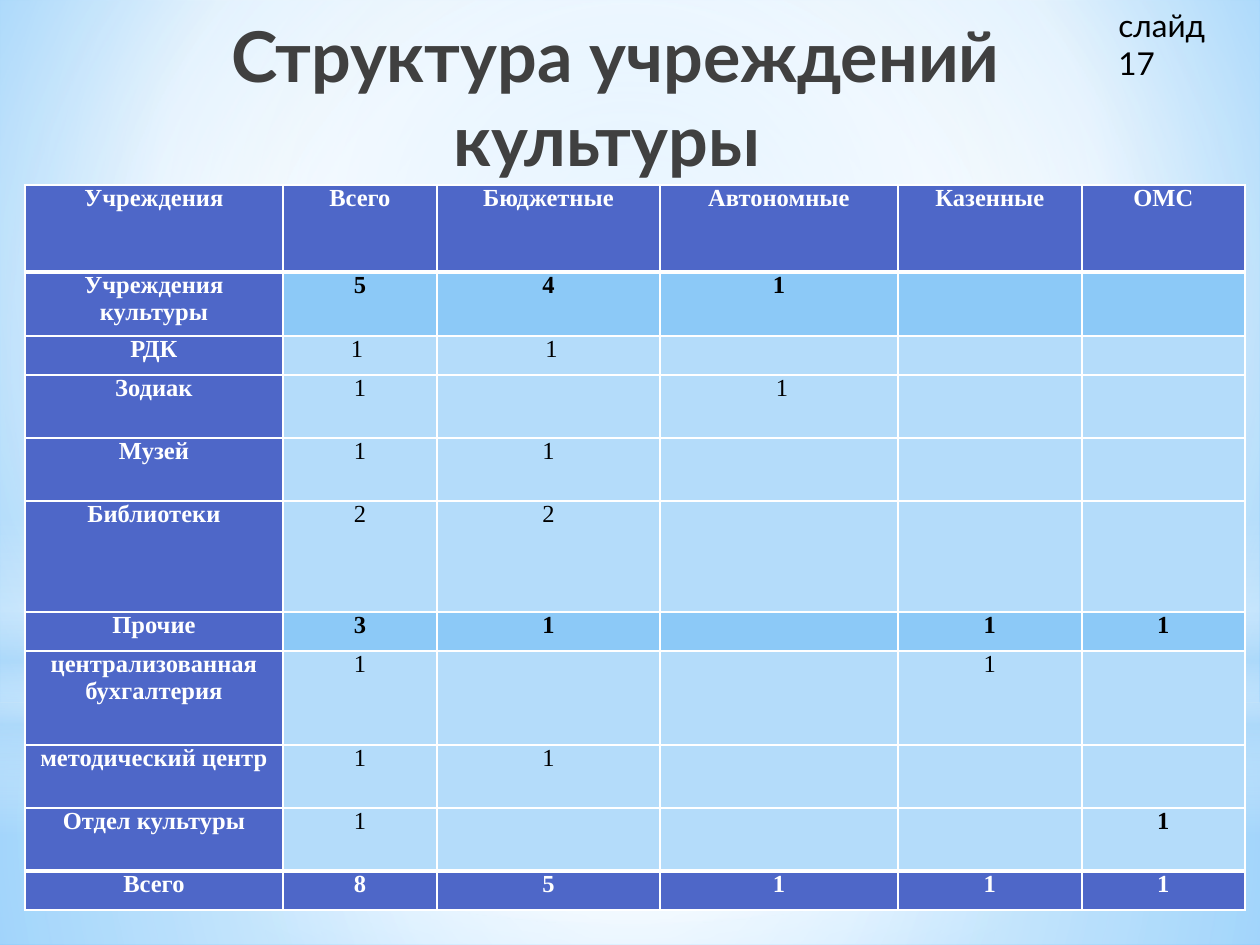
"""Build the slide on the structure of cultural institutions."""
from dataclasses import dataclass
from typing import Optional

from pptx import Presentation
from pptx import util as u
from pptx.dml.color import RGBColor
from pptx.enum import shapes, text
from pptx.oxml import parse_xml
from pptx.oxml.ns import nsdecls

PX = u.Inches(1) / 126
COLORS = {
    "white": "FFFFFF", "black": "000000", "title": "404040",
    "head": "4E67C8", "group": "8CC9F7", "body": "B4DCFA",
    "sky": "9ED5FF", "azure": "5BB9FF",
}
SERIF, SANS = "Times New Roman", "Lato"
CENTER = (50, 50, 50, 50)
COLUMNS = [258, 154, 223, 238, 184, 163]


@dataclass
class Glow:
    box: tuple
    stops: list
    focus: Optional[tuple] = CENTER
    preset: shapes.MSO_SHAPE = shapes.MSO_SHAPE.RECTANGLE


@dataclass
class Row:
    height: int
    cells: list
    tone: str = "body"
    bold_columns: tuple = (0,)


SKY = Glow((0, 0, 1260, 945),
           [(0, "sky", 100), (60, "white", 100), (100, "azure", 100)], (20, 10, 20, 60))
GLOWS = [
    Glow((0, 703, 1260, 242), [(0, "white", 91), (37, "white", 76), (100, "body", 79)]),
    Glow((0, 0, 1260, 703), [(0, "white", 89), (48, "white", 62), (100, "body", 79)]),
    Glow((0, 519, 1260, 315),
         [(0, "white", 0), (29, "white", 30), (45, "body", 40),
          (55, "white", 26), (65, "body", 60), (100, "white", 0)], None),
    Glow((0, 220, 1260, 703), [(0, "white", 100), (56, "white", 0)],
         preset=shapes.MSO_SHAPE.OVAL),
]
ALL = tuple(range(len(COLUMNS)))
ROWS = [
    Row(87, ["Учреждения", "Всего", "Бюджетные", "Автономные", "Казенные", "ОМС"], "head", ALL),
    Row(64, ["Учреждения культуры", "5", "4", "1", "", ""], "group", ALL),
    Row(39, ["РДК", "1 ", " 1", "", "", ""]),
    Row(63, ["Зодиак", "1", "", " 1", "", ""]),
    Row(63, ["Музей", "1", "1", "", "", ""]),
    Row(111, ["Библиотеки", "2", "2", "", "", ""]),
    Row(39, ["Прочие", "3", "1", "", "1", "1"], "group", ALL),
    Row(94, ["централизованная бухгалтерия", "1", "", "", "1", ""]),
    Row(63, ["методический центр", "1", "1", "", "", ""]),
    Row(63, ["Отдел культуры", "1", "", "", "", "1"], bold_columns=(0, 5)),
    Row(39, ["Всего", "8", "5", "1", "1", "1"], "head", ALL),
]


def px(length: int) -> int:
    return round(length * PX)


def place(box: tuple) -> list:
    return [px(side) for side in box]


def write(frame, words: str, *, size: int, font: str, color: str,
          bold: bool = False, align=text.PP_ALIGN.LEFT) -> None:
    paragraph = frame.paragraphs[0]
    paragraph.alignment = align
    run = paragraph.add_run()
    run.text = words
    run.font.size = u.Pt(size)
    run.font.name = font
    run.font.bold = bold
    run.font.color.rgb = RGBColor.from_string(COLORS[color])


def apply_gradient(owner, fill, glow: Glow) -> None:
    fill.gradient()
    stops = "".join(
        f'<a:gs pos="{pos * 1000}"><a:srgbClr val="{COLORS[color]}">'
        f'<a:alpha val="{opacity * 1000}"/></a:srgbClr></a:gs>'
        for pos, color, opacity in glow.stops)
    if glow.focus:
        sides = " ".join(f'{side}="{share * 1000}"' for side, share in zip("ltrb", glow.focus))
        course = f'<a:path path="circle"><a:fillToRect {sides}/></a:path>'
    else:
        course = '<a:lin ang="5400000" scaled="0"/>'
    old = owner.xpath(".//a:gradFill")[0]
    old.getparent().replace(old, parse_xml(
        f'<a:gradFill {nsdecls("a")} rotWithShape="1"><a:gsLst>{stops}</a:gsLst>{course}</a:gradFill>'))


def add_glow(slide, glow: Glow) -> None:
    light = slide.shapes.add_shape(glow.preset, *place(glow.box))
    light.shadow.inherit = False
    light.line.fill.background()
    apply_gradient(light.element, light.fill, glow)


def add_borders(cell, top: int, bottom: int) -> None:
    properties = cell._tc.get_or_add_tcPr()
    for side, width in {"L": 1, "R": 1, "T": top, "B": bottom}.items():
        properties.append(parse_xml(
            f'<a:ln{side} {nsdecls("a")} w="{u.Pt(width)}"><a:solidFill>'
            f'<a:srgbClr val="{COLORS["white"]}"/></a:solidFill></a:ln{side}>'))


def add_institutions(slide, left: int, top: int) -> None:
    size = (sum(COLUMNS), sum(row.height for row in ROWS))
    table = slide.shapes.add_table(len(ROWS), len(COLUMNS), *place((left, top, *size))).table
    for column, width in zip(table.columns, COLUMNS):
        column.width = px(width)
    last = len(ROWS) - 1
    for r, row in enumerate(ROWS):
        table.rows[r].height = px(row.height)
        for c, words in enumerate(row.cells):
            cell = table.cell(r, c)
            tone = "head" if c == 0 else row.tone
            cell.margin_left = cell.margin_right = px(9)
            cell.margin_top = cell.margin_bottom = 0
            add_borders(cell, 3 if r in (1, last) else 1, 3 if r in (0, last - 1) else 1)
            cell.fill.solid()
            cell.fill.fore_color.rgb = RGBColor.from_string(COLORS[tone])
            if words:
                write(cell.text_frame, words, size=14, font=SERIF,
                      color="white" if tone == "head" else "black",
                      bold=c in row.bold_columns, align=text.PP_ALIGN.CENTER)


def main() -> None:
    deck = Presentation()
    deck.slide_width, deck.slide_height = place((1260, 945))
    slide = deck.slides.add_slide(deck.slide_layouts[5])
    apply_gradient(slide.element, slide.background.fill, SKY)
    for glow in GLOWS:
        add_glow(slide, glow)

    heading = slide.shapes.title
    heading.element.getparent().append(heading.element)
    heading.left, heading.top, heading.width, heading.height = place((95, 6, 1041, 158))
    heading.text_frame.auto_size = text.MSO_AUTO_SIZE.NONE
    heading.text_frame.vertical_anchor = text.MSO_ANCHOR.TOP
    write(heading.text_frame, "Структура учреждений культуры ", size=40, font=SANS,
          color="title", bold=True, align=text.PP_ALIGN.CENTER)

    add_institutions(slide, 25, 185)

    page_mark = slide.shapes.add_textbox(*place((1106, 0, 155, 50))).text_frame
    page_mark.word_wrap = True
    page_mark.margin_right = px(45)
    write(page_mark, "слайд 17", size=18, font=SANS, color="black")
    deck.save("out.pptx")


if __name__ == "__main__":
    main()
